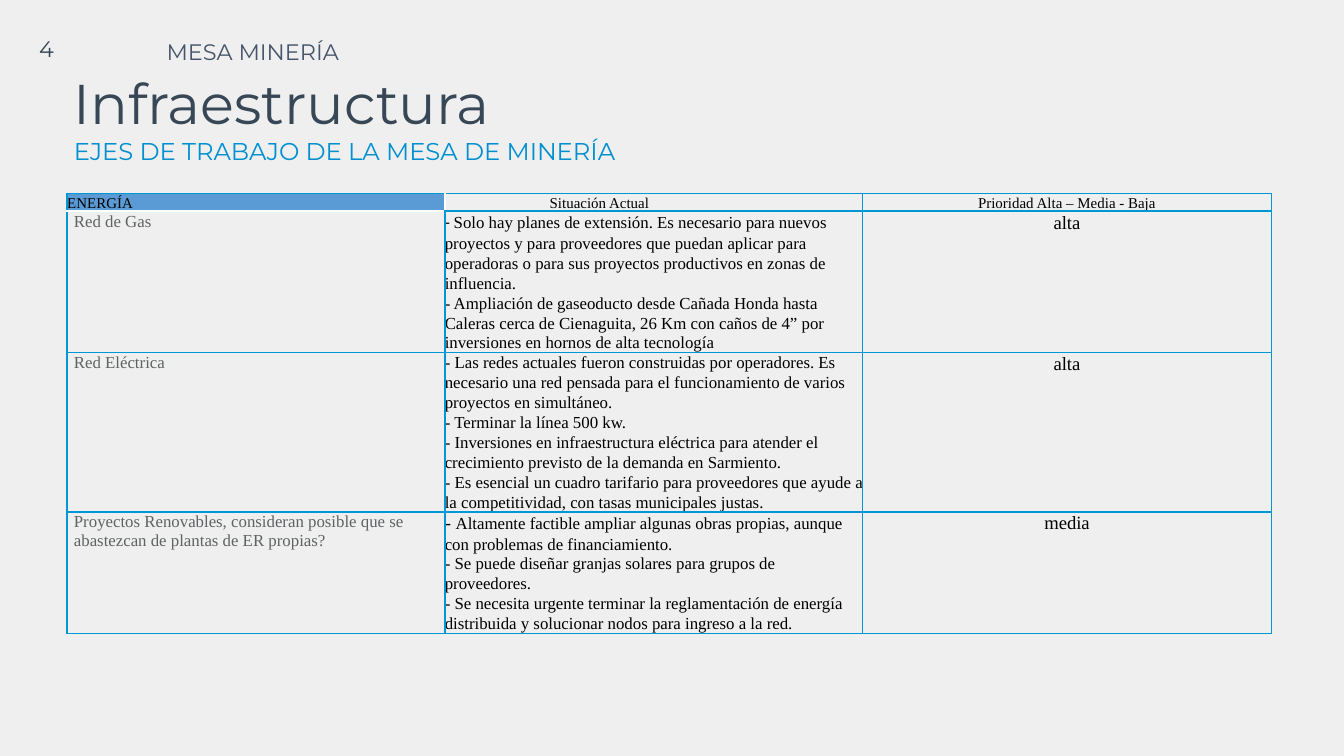
"""Build the mining table slide on infrastructure."""
from lxml import etree
from pptx import Presentation
from pptx.dml.color import RGBColor
from pptx.enum.text import MSO_ANCHOR, MSO_AUTO_SIZE, PP_ALIGN
from pptx.oxml.ns import qn
from pptx.util import Pt

LEFT, CENTER, RIGHT = PP_ALIGN.LEFT, PP_ALIGN.CENTER, PP_ALIGN.RIGHT
TOP, MIDDLE = MSO_ANCHOR.TOP, MSO_ANCHOR.MIDDLE
NO_FIT = MSO_AUTO_SIZE.NONE

HEADS = ["ENERGÍA", "Situación Actual", "Prioridad Alta – Media - Baja"]
ROWS = [
    ("Red de Gas", [
        "- Solo hay planes de extensión. Es necesario para nuevos proyectos y para proveedores "
        "que puedan aplicar para operadoras o para sus proyectos productivos en zonas de influencia.",
        "- Ampliación de gaseoducto desde Cañada Honda hasta Caleras cerca de Cienaguita, 26 Km "
        "con caños de 4” por inversiones en hornos de alta tecnología",
    ], "alta", ("Calibri", 9)),
    ("Red Eléctrica", [
        "- Las redes actuales fueron construidas por operadores. Es necesario una red pensada "
        "para el funcionamiento de varios proyectos en simultáneo.",
        "- Terminar la línea 500 kw.",
        "- Inversiones en infraestructura eléctrica para atender el crecimiento previsto "
        "de la demanda en Sarmiento.",
        "- Es esencial un cuadro tarifario para proveedores que ayude a la competitividad, "
        "con tasas municipales justas.",
    ], "alta", None),
    ("Proyectos Renovables, consideran posible que se abastezcan de plantas de ER propias?", [
        "- Altamente factible ampliar algunas obras propias, aunque con problemas de financiamiento.",
        "- Se puede diseñar granjas solares para grupos de proveedores.",
        "- Se necesita urgente terminar la reglamentación de energía distribuida y solucionar "
        "nodos para ingreso a la red.",
    ], "media", ("Times New Roman", 10)),
]


def color(code):
    return RGBColor.from_string(code)


class Deck:
    sans, serif = "Montserrat", "Times New Roman"
    dark, slate, blue = "374756", "44546A", "0090D0"
    rule, head, gray, black = "0097D5", "5B9BD5", "5F6263", "000000"

    def __init__(self):
        self.prs = Presentation()
        self.prs.slide_width, self.prs.slide_height = Pt(720), Pt(405)
        self.slide = self.prs.slides.add_slide(self.prs.slide_layouts[5])
        fill = self.slide.background.fill
        fill.solid()
        fill.fore_color.rgb = color("EFEFEF")

    def style(self, para, size, tint, face, align=LEFT):
        para.alignment = align
        for run in para.runs:
            run.font.name, run.font.size = face, Pt(size)
            run.font.color.rgb = color(tint)

    def frame(self, shape, inset, anchor=TOP):
        frame = shape.text_frame
        frame.word_wrap, frame.auto_size = True, NO_FIT
        frame.vertical_anchor = anchor
        frame.margin_left = frame.margin_right = Pt(inset)
        frame.margin_top = frame.margin_bottom = Pt(inset)
        return frame

    def title(self, box, lines):
        shape = self.slide.shapes.title
        shape.left, shape.top, shape.width, shape.height = map(Pt, box)
        frame = self.frame(shape, 3.6)
        frame.text = "\n".join(text for text, _, _ in lines)
        for para, (_, size, tint) in zip(frame.paragraphs, lines):
            self.style(para, size, tint, self.sans)

    def label(self, box, text, tint, inset=3.6, align=LEFT, anchor=TOP):
        shape = self.slide.shapes.add_textbox(*map(Pt, box))
        frame = self.frame(shape, inset, anchor)
        frame.text = text
        self.style(frame.paragraphs[0], 12, tint, self.sans, align)

    def table(self, left, top, cols, rows):
        shape = self.slide.shapes.add_table(
            len(rows), len(cols), Pt(left), Pt(top), Pt(sum(cols)), Pt(sum(rows)))
        grid = shape.table
        grid.first_row = grid.horz_banding = False
        for col, width in zip(grid.columns, cols):
            col.width = Pt(width)
        for row, height in zip(grid.rows, rows):
            row.height = Pt(height)
        return grid

    def border(self, cell, sides):
        props = cell._tc.get_or_add_tcPr()
        for side in sides:
            line = etree.SubElement(props, qn(f"a:ln{side}"), w=str(Pt(1)))
            fill = etree.SubElement(line, qn("a:solidFill"))
            etree.SubElement(fill, qn("a:srgbClr"), val=self.rule)

    def cell(self, cell, lines, size, tint=black, align=LEFT, indent=0,
             space=1.07, before=0, fill=None, sides="LRTB", dash=None):
        self.border(cell, sides)
        cell.margin_left = Pt(indent)
        cell.margin_right = cell.margin_top = cell.margin_bottom = 0
        if fill:
            cell.fill.solid()
            cell.fill.fore_color.rgb = color(fill)
        else:
            cell.fill.background()
        frame = cell.text_frame
        frame.text = "\n".join(lines)
        first = frame.paragraphs[0]
        if dash:
            first.runs[0].text = "- "
            first.add_run().text = lines[0][2:]
        for para in frame.paragraphs:
            para.line_spacing, para.space_before = space, Pt(before)
            self.style(para, size, tint, self.serif, align)
        if dash:
            font = first.runs[0].font
            font.name, font.size = dash[0], Pt(dash[1])


def main():
    deck = Deck()
    deck.title((36, 33.1, 345.6, 58.3), [
        ("Infraestructura", 30, deck.dark),
        ("EJES DE TRABAJO DE LA MESA DE MINERÍA", 13, deck.blue)])
    deck.label((13.7, 12.2, 22.3, 28.1), "4", deck.dark, 7.2, RIGHT, MIDDLE)
    deck.label((85.7, 16.6, 237.6, 20.9), "MESA MINERÍA", deck.slate)

    grid = deck.table(36, 103.7, (202.3, 223.9, 218.9), (9.4, 75.6, 85.3, 65))
    looks = [dict(fill=deck.head, sides="LT"),
             dict(indent=56.2, before=1.9, sides="RTB"),
             dict(align=CENTER, before=1.9)]
    for col, (text, look) in enumerate(zip(HEADS, looks)):
        deck.cell(grid.cell(0, col), [text], 8, **look)
    for row, (name, notes, rank, dash) in enumerate(ROWS, 1):
        sides = "LRB" if row == 1 else "LRTB"
        deck.cell(grid.cell(row, 0), [name], 9, deck.gray, indent=3.6,
                  space=1.04, before=3, sides=sides)
        deck.cell(grid.cell(row, 1), notes, 9, dash=dash)
        deck.cell(grid.cell(row, 2), [rank], 10, align=CENTER)
    deck.prs.save("out.pptx")


if __name__ == "__main__":
    main()
